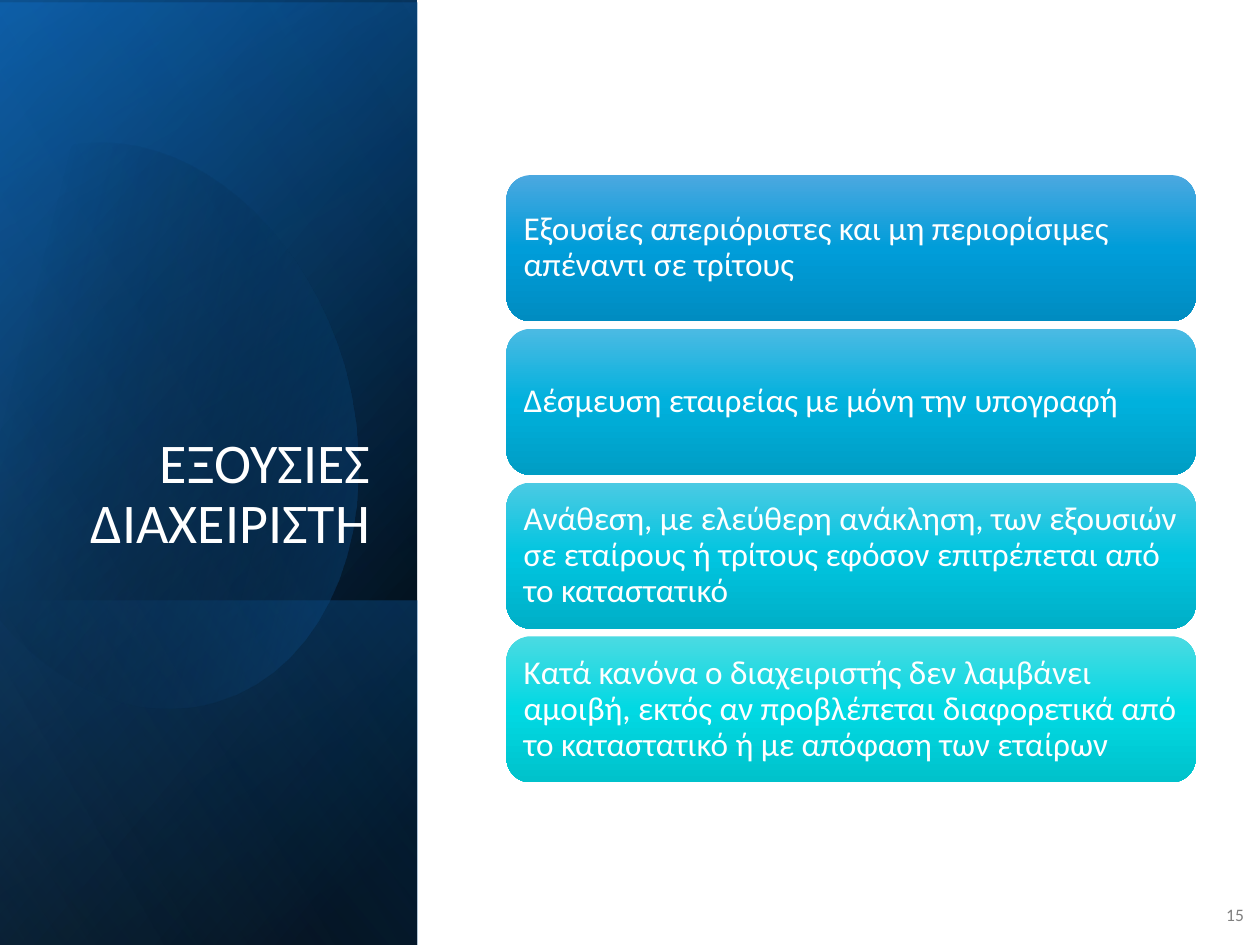
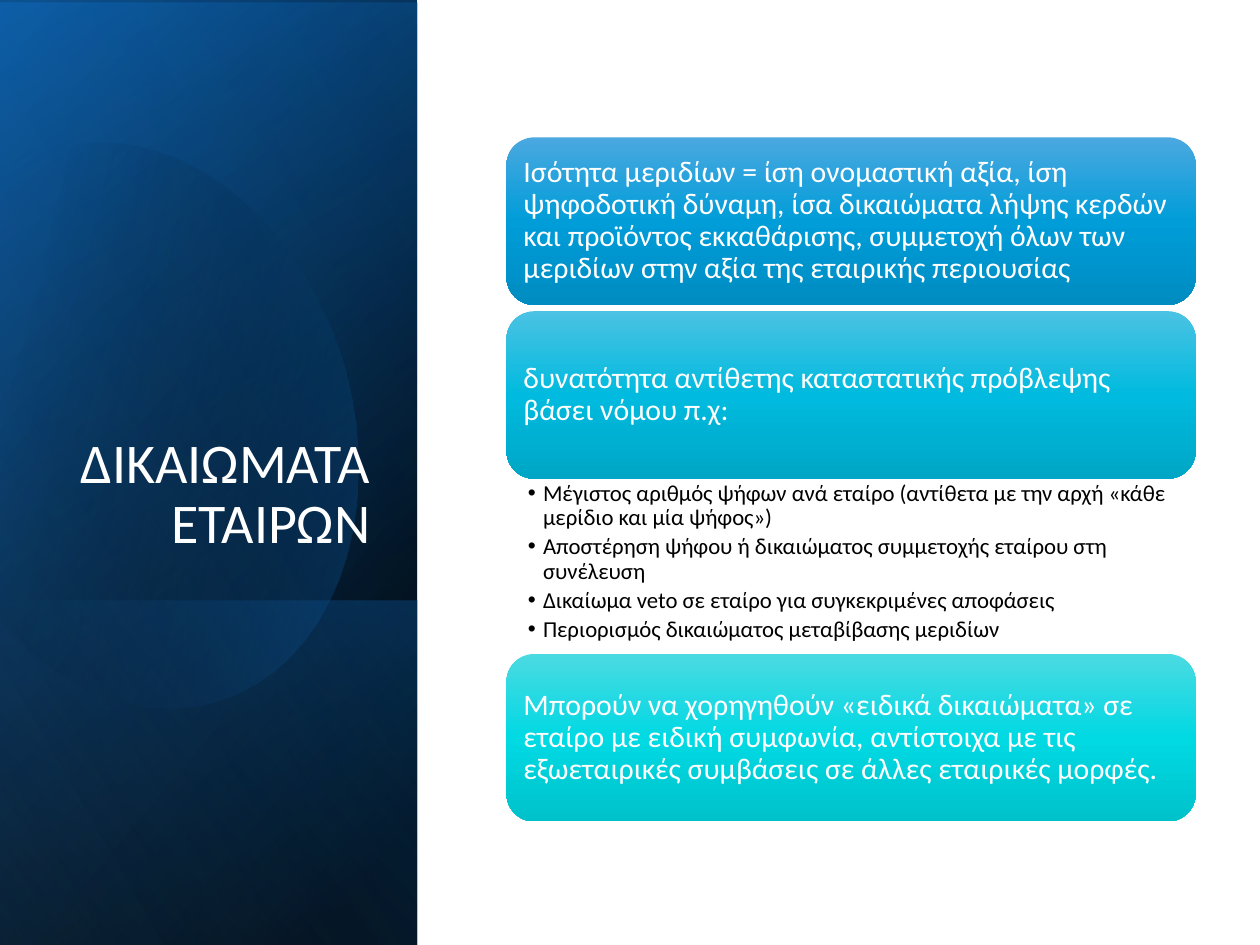
from math import cos, radians, sin

from lxml import etree
from pptx import Presentation
from pptx.dml.color import RGBColor
from pptx.enum.shapes import MSO_SHAPE as Shape
from pptx.enum.text import MSO_ANCHOR as Anchor, PP_ALIGN as Align
from pptx.oxml.ns import qn
from pptx.util import Inches, Pt

FONT = "Calibri"
WHITE = RGBColor(0xFF, 0xFF, 0xFF)
BLACK = RGBColor(0x00, 0x00, 0x00)
GRAY = RGBColor(0x80, 0x80, 0x80)
NAVY = RGBColor(0x0B, 0x53, 0x94)
BLUE = RGBColor(0x0F, 0x6F, 0xC6)
SKY = RGBColor(0x59, 0xAA, 0xF2)

AZURE_CARD = [RGBColor(0x4B, 0xA8, 0xE0), RGBColor(0x00, 0x9D, 0xD9), RGBColor(0x00, 0x8C, 0xC1)]
CERULEAN_CARD = [RGBColor(0x4B, 0xBA, 0xE3), RGBColor(0x00, 0xB1, 0xDD), RGBColor(0x00, 0x9D, 0xC4)]
LAGOON_CARD = [RGBColor(0x4B, 0xC2, 0xE3), RGBColor(0x00, 0xBB, 0xDF), RGBColor(0x00, 0xA6, 0xC6)]
CYAN_CARD = [RGBColor(0x4B, 0xCA, 0xE3), RGBColor(0x00, 0xC5, 0xE0), RGBColor(0x00, 0xAF, 0xC7)]
TURQUOISE_CARD = [RGBColor(0x4B, 0xDA, 0xE2), RGBColor(0x01, 0xD9, 0xE3), RGBColor(0x00, 0xC2, 0xCB)]

SLIDES = [
    {
        "title": "ΕΞΟΥΣΙΕΣ ΔΙΑΧΕΙΡΙΣΤΗ",
        "number": "15",
        "top": 13.9, "card_rows": 11.6, "gap": 0.6, "size": 19, "inset": 0.8,
        "blocks": [
            ("Εξουσίες απεριόριστες και μη περιορίσιμες απέναντι σε τρίτους", AZURE_CARD),
            ("Δέσμευση εταιρείας με μόνη την υπογραφή", CERULEAN_CARD),
            ("Ανάθεση, με ελεύθερη ανάκληση, των εξουσιών σε εταίρους ή τρίτους "
             "εφόσον επιτρέπεται από το καταστατικό", CYAN_CARD),
            ("Κατά κανόνα ο διαχειριστής δεν λαμβάνει αμοιβή, εκτός αν προβλέπεται "
             "διαφορετικά από το καταστατικό ή με απόφαση των εταίρων", TURQUOISE_CARD),
        ],
    },
    {
        "title": "ΔΙΚΑΙΩΜΑΤΑ ΕΤΑΙΡΩΝ",
        "number": None,
        "top": 10.9, "card_rows": 13.3, "gap": 0.5, "size": 17, "inset": 0.7,
        "blocks": [
            ("Ισότητα μεριδίων = ίση ονομαστική αξία, ίση ψηφοδοτική δύναμη, ίσα δικαιώματα "
             "λήψης κερδών και προϊόντος εκκαθάρισης, συμμετοχή όλων των μεριδίων στην αξία "
             "της εταιρικής περιουσίας", AZURE_CARD),
            ("δυνατότητα αντίθετης καταστατικής πρόβλεψης βάσει νόμου π.χ:", LAGOON_CARD),
            (["Μέγιστος αριθμός ψήφων ανά εταίρο (αντίθετα με την αρχή «κάθε μερίδιο και μία ψήφος»)",
              "Αποστέρηση ψήφου ή δικαιώματος συμμετοχής εταίρου στη συνέλευση",
              "Δικαίωμα veto σε εταίρο για συγκεκριμένες αποφάσεις",
              "Περιορισμός δικαιώματος μεταβίβασης μεριδίων"], None),
            ("Μπορούν να χορηγηθούν «ειδικά δικαιώματα» σε εταίρο με ειδική συμφωνία, αντίστοιχα "
             "με τις εξωεταιρικές συμβάσεις σε άλλες εταιρικές μορφές.", TURQUOISE_CARD),
        ],
    },
]

GRID = Inches(0.1)
COLUMNS, ROWS = 100, 75
PANEL_COLUMNS = 33.1
CARD_LEFT, CARD_COLUMNS = 40.2, 54.7
BULLET_ROWS = 13.9
TITLE_AREA = (4.8, 18.4, 25.6, 26.2)
NUMBER_AREA = (96, 70.6, 3.7, 4)

BASE_LAYERS = [
    (0, ROWS, [(8, BLACK, 100), (100, NAVY, 100)], 50),
    (0.2, ROWS, [(0, BLACK, 0), (99, BLUE, 46)], 30),
    (47.7, 27.4, [(2, BLUE, 29), (100, BLACK, 30)], 130),
]
TOP_LAYER = (0, ROWS, [(0, BLACK, 0), (99, SKY, 11)], 120)

GLOW_STOPS = [(29, BLACK, 0), (100, BLUE, 43)]
GLOW_CENTER = (11.9, 33.45)
GLOW_TURN = 343.9
GLOW_START = (9.6, 11.4)
GLOW_SEGMENTS = [
    [(17.1, 12.2), (24.4, 19.2), (27.3, 29)],
    [(30.7, 41.2), (26.2, 53.1), (17.1, 55.7)],
    [(11.4, 57.4), (5.3, 55), (0.7, 50)],
    [(-0.3, 48.8)],
    [(-2.5, 16.6)],
    [(-1.5, 15.4)],
    [(0.2, 13.7), (2.2, 12.5), (4.5, 11.8)],
    [(6.2, 11.3), (7.9, 11.2), GLOW_START],
]
CURVE_STEPS = 16


def place(*cells):
    return [round(cell * GRID) for cell in cells]


def paint_gradient(shape, stops, angle):
    shape.shadow.inherit = False
    shape.line.fill.background()
    shape.fill.gradient()
    gradient = shape._element.spPr.find(qn("a:gradFill"))
    for child in list(gradient):
        gradient.remove(child)
    gradient.set("rotWithShape", "1")
    stop_list = etree.SubElement(gradient, qn("a:gsLst"))
    for position, color, opacity in stops:
        stop = etree.SubElement(stop_list, qn("a:gs"), pos=str(position * 1000))
        fill = etree.SubElement(stop, qn("a:srgbClr"), val=str(color))
        if opacity < 100:
            etree.SubElement(fill, qn("a:alpha"), val=str(opacity * 1000))
    etree.SubElement(gradient, qn("a:lin"), ang=str(angle * 60000), scaled="0")


def add_bullet(paragraph):
    properties = paragraph._p.get_or_add_pPr()
    indent = Inches(0.12)
    properties.set("marL", str(indent))
    properties.set("indent", str(-indent))
    etree.SubElement(properties, qn("a:buFont"), typeface="Arial")
    etree.SubElement(properties, qn("a:buChar"), char="•")


def write(shape, text, size, color=WHITE, align=Align.LEFT, anchor=Anchor.MIDDLE,
          insets=(1, 0.5, 1, 0.5), spacing=0.9, after=0, bullets=False):
    frame = shape.text_frame
    frame.word_wrap = True
    frame.vertical_anchor = anchor
    (frame.margin_left, frame.margin_top,
     frame.margin_right, frame.margin_bottom) = place(*insets)
    lines = text if isinstance(text, list) else [text]
    for index, line in enumerate(lines):
        paragraph = frame.add_paragraph() if index else frame.paragraphs[0]
        paragraph.alignment = align
        paragraph.line_spacing = spacing
        paragraph.space_after = Pt(after)
        if bullets:
            add_bullet(paragraph)
        run = paragraph.add_run()
        run.text = line
        run.font.name = FONT
        run.font.size = Pt(size)
        run.font.color.rgb = color


def add_layer(slide, top, height, stops, angle):
    left = (PANEL_COLUMNS - height) / 2
    turned_top = top + (height - PANEL_COLUMNS) / 2
    layer = slide.shapes.add_shape(
        Shape.RECTANGLE, *place(left, turned_top, height, PANEL_COLUMNS))
    layer.rotation = 90
    layer._element.spPr.find(qn("a:xfrm")).set("flipH", "1")
    paint_gradient(layer, stops, angle)


def curve_point(points, share):
    while len(points) > 1:
        points = [tuple(a + (b - a) * share for a, b in zip(first, second))
                  for first, second in zip(points, points[1:])]
    return points[0]


def unturn(point):
    angle = radians(-GLOW_TURN)
    x, y = (value - center for value, center in zip(point, GLOW_CENTER))
    return place(GLOW_CENTER[0] + x * cos(angle) - y * sin(angle),
                 GLOW_CENTER[1] + x * sin(angle) + y * cos(angle))


def add_glow(slide):
    outline = [GLOW_START]
    for segment in GLOW_SEGMENTS:
        points = [outline[-1], *segment]
        steps = CURVE_STEPS if len(segment) > 1 else 1
        outline += [curve_point(points, step / steps) for step in range(1, steps + 1)]
    start, *others = [unturn(point) for point in outline]
    builder = slide.shapes.build_freeform(*start)
    builder.add_line_segments(others, close=True)
    glow = builder.convert_to_shape()
    glow.rotation = GLOW_TURN
    paint_gradient(glow, GLOW_STOPS, 30)


def add_panel(slide, title):
    for layer in BASE_LAYERS:
        add_layer(slide, *layer)
    add_glow(slide)
    add_layer(slide, *TOP_LAYER)
    box = slide.shapes.add_textbox(*place(*TITLE_AREA))
    write(box, title, 32, align=Align.RIGHT, anchor=Anchor.BOTTOM)


def add_blocks(slide, content):
    top, height, gap = content["top"], content["card_rows"], content["gap"]
    blocks = content["blocks"]
    for index, (text, colors) in enumerate(blocks):
        if colors is None:
            box = slide.shapes.add_textbox(*place(CARD_LEFT, top, CARD_COLUMNS, BULLET_ROWS))
            write(box, text, 13, color=BLACK, anchor=Anchor.TOP,
                  insets=(1.7, 0.2, 1.3, 0.2), after=2.6, bullets=True)
            top += BULLET_ROWS
            continue
        card = slide.shapes.add_shape(
            Shape.ROUNDED_RECTANGLE, *place(CARD_LEFT, top, CARD_COLUMNS, height))
        paint_gradient(card, [(share, color, 100) for share, color in zip((0, 50, 100), colors)], 90)
        write(card, text, content["size"], insets=[content["inset"]] * 4)
        bullets_follow = index + 1 < len(blocks) and blocks[index + 1][1] is None
        top += height + (0 if bullets_follow else gap)


def main():
    presentation = Presentation()
    presentation.slide_width, presentation.slide_height = place(COLUMNS, ROWS)
    for content in SLIDES:
        slide = presentation.slides.add_slide(presentation.slide_layouts[6])
        add_panel(slide, content["title"])
        if content["number"]:
            box = slide.shapes.add_textbox(*place(*NUMBER_AREA))
            write(box, content["number"], 10, color=GRAY, align=Align.RIGHT, spacing=1, after=6)
        add_blocks(slide, content)
    presentation.save("out.pptx")


if __name__ == "__main__":
    main()
